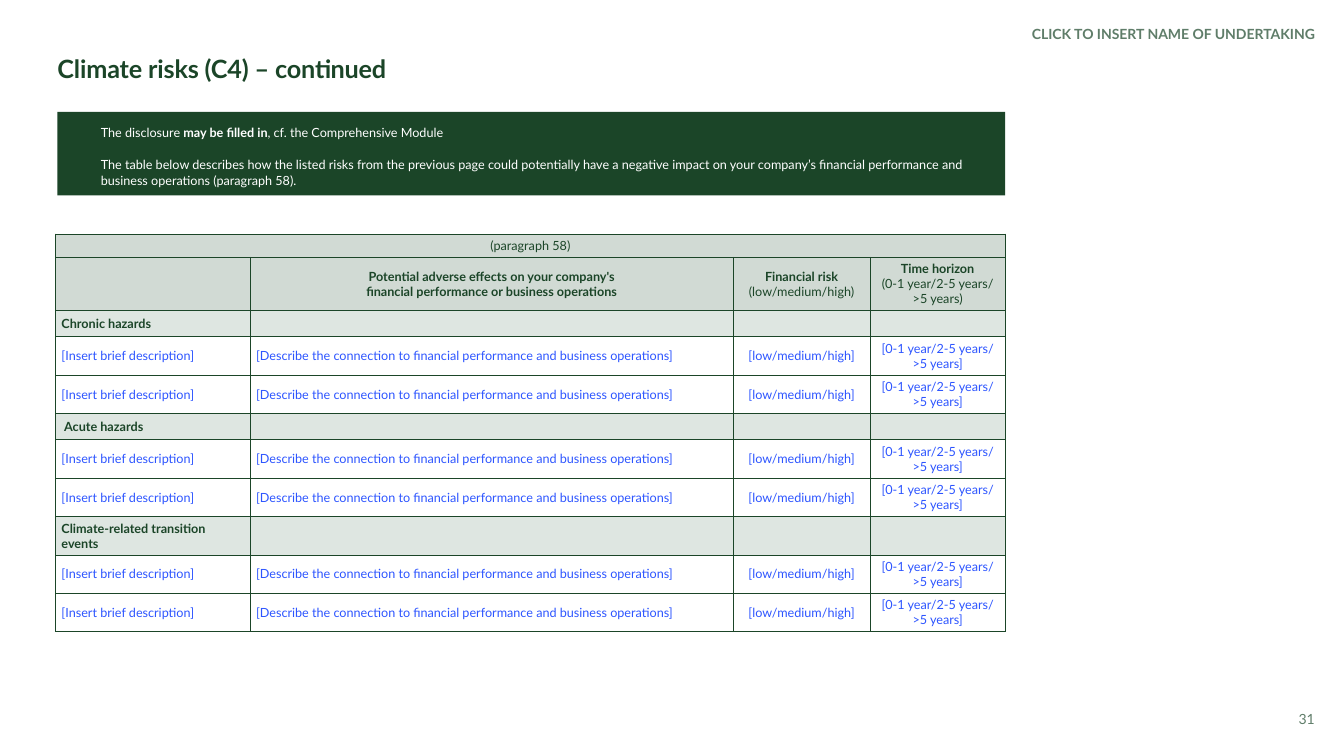
import pptx
import pptx.dml.color
import pptx.enum.shapes
import pptx.enum.text
import pptx.oxml.ns
import pptx.util
from lxml import etree
from pptx.util import Inches

COLORS = {
    "dark": "1B4528",
    "muted": "5F7D69",
    "header": "D1DAD4",
    "section": "DEE6E1",
    "input": "2D55FF",
    "white": "FFFFFF",
}
FONT = "Lato"
ALIGN = pptx.enum.text.PP_ALIGN
ANCHOR = pptx.enum.text.MSO_ANCHOR

COLUMN_WIDTHS = [1.93, 4.79, 1.36, 1.34]
COLUMN_ALIGNMENTS = [ALIGN.LEFT, ALIGN.LEFT, ALIGN.CENTER, ALIGN.CENTER]
CAPTION_HEIGHT, HEADER_HEIGHT, ENTRY_HEIGHT = 0.23, 0.53, 0.38
ENTRIES_PER_SECTION = 2
SECTIONS = [
    ("Chronic hazards", 0.26),
    (" Acute hazards", 0.26),
    ("Climate-related transition events", 0.38),
]
# Each header cell is a list of paragraphs, each paragraph a list of (text, bold) runs.
HEADERS = [
    [],
    [[("Potential adverse effects on your company's", True)],
     [("financial performance or business operations", True)]],
    [[("Financial risk ", True), ("(low/medium/high)", False)]],
    [[("Time horizon", True)], [("(0-1 year/2-5 years/ >5 years)", False)]],
]
ENTRY = [
    "[Insert brief description]",
    "[Describe the connection to financial performance and business operations]",
    "[low/medium/high]",
    "[0-1 year/2-5 years/ >5 years]",
]
NOTICE = [
    [("The disclosure ", False), ("may be filled in", True),
     (", cf. the Comprehensive Module", False)],
    [("The table below describes how the listed risks from the previous page could "
      "potentially have a negative impact on your company’s financial performance and "
      "business operations (paragraph 58).", False)],
]


def rgb(name):
    return pptx.dml.color.RGBColor.from_string(COLORS[name])


def set_margins(text_frame, left=0, top=0, right=0, bottom=0):
    text_frame.margin_left, text_frame.margin_top = Inches(left), Inches(top)
    text_frame.margin_right, text_frame.margin_bottom = Inches(right), Inches(bottom)


def format_run(run, size, color, bold):
    run.font.name = FONT
    run.font.size = pptx.util.Pt(size)
    run.font.bold = bold
    run.font.color.rgb = rgb(color)


def write_paragraphs(text_frame, paragraphs, size, color, alignment=ALIGN.LEFT):
    """Fill a text frame from lists of (text, bold) runs."""
    for index, runs in enumerate(paragraphs):
        paragraph = text_frame.paragraphs[0] if index == 0 else text_frame.add_paragraph()
        paragraph.alignment = alignment
        for text, bold in runs:
            run = paragraph.add_run()
            run.text = text
            format_run(run, size, color, bold)


def add_label(slide, box, text, bold):
    """Add a right-aligned line of muted text."""
    label = slide.shapes.add_textbox(*map(Inches, box))
    label.text_frame.word_wrap = True
    set_margins(label.text_frame)
    write_paragraphs(label.text_frame, [[(text, bold)]], 10, "muted", ALIGN.RIGHT)


def set_title(slide, text):
    title = slide.shapes.title
    title.left, title.top = Inches(0.57), Inches(0.56)
    title.width, title.height = Inches(12.21), Inches(0.28)
    frame = title.text_frame
    frame.text = text
    frame.auto_size = pptx.enum.text.MSO_AUTO_SIZE.NONE
    frame.vertical_anchor = ANCHOR.TOP
    set_margins(frame)
    paragraph = frame.paragraphs[0]
    paragraph.alignment = ALIGN.LEFT
    paragraph.line_spacing = 0.9
    format_run(paragraph.runs[0], 18, "dark", True)
    paragraph.runs[0].font._element.set("spc", "-10")


def add_notice(slide):
    notice = slide.shapes.add_shape(
        pptx.enum.shapes.MSO_SHAPE.RECTANGLE,
        Inches(0.57), Inches(1.11), Inches(9.4), Inches(0.83))
    notice.shadow.inherit = False
    notice.fill.solid()
    notice.fill.fore_color.rgb = rgb("dark")
    notice.line.fill.background()
    frame = notice.text_frame
    frame.word_wrap = True
    frame.vertical_anchor = ANCHOR.TOP
    set_margins(frame, 0.43, 0.12, 0.12, 0.16)
    write_paragraphs(frame, NOTICE, 9, "white")
    for paragraph in frame.paragraphs:
        paragraph.line_spacing = 1.06
    frame.paragraphs[1].space_before = pptx.util.Pt(11.5)


def add_borders(cell):
    properties = cell._tc.get_or_add_tcPr()
    for side in ("lnL", "lnR", "lnT", "lnB"):
        line = etree.SubElement(properties, pptx.oxml.ns.qn(f"a:{side}"),
                                w=str(pptx.util.Pt(0.5)))
        fill = etree.SubElement(line, pptx.oxml.ns.qn("a:solidFill"))
        etree.SubElement(fill, pptx.oxml.ns.qn("a:srgbClr"), val=COLORS["dark"])


def fill_cell(cell, paragraphs, fill, color, alignment):
    add_borders(cell)
    cell.fill.solid()
    cell.fill.fore_color.rgb = rgb(fill)
    cell.vertical_anchor = ANCHOR.MIDDLE
    cell.margin_left = cell.margin_right = Inches(0.06)
    cell.margin_top = cell.margin_bottom = Inches(0.04)
    write_paragraphs(cell.text_frame, paragraphs, 9, color, alignment)
    if not paragraphs:
        # Keeps an empty cell from stretching its row.
        etree.SubElement(cell.text_frame.paragraphs[0]._p,
                         pptx.oxml.ns.qn("a:endParaRPr"), sz="900")


def table_rows():
    """Return (height, cells, fill, text color, alignments) for every row."""
    centered = [ALIGN.CENTER] * len(COLUMN_WIDTHS)
    rows = [
        (CAPTION_HEIGHT, [[[("(paragraph 58)", False)]], [], [], []],
         "header", "dark", centered),
        (HEADER_HEIGHT, HEADERS, "header", "dark", centered),
    ]
    entry = [[[(text, False)]] for text in ENTRY]
    for name, height in SECTIONS:
        rows.append((height, [[[(name, True)]], [], [], []],
                     "section", "dark", COLUMN_ALIGNMENTS))
        rows += [(ENTRY_HEIGHT, entry, "white", "input",
                  COLUMN_ALIGNMENTS)] * ENTRIES_PER_SECTION
    return rows


def add_risk_table(slide):
    rows = table_rows()
    height = sum(row[0] for row in rows)
    table = slide.shapes.add_table(
        len(rows), len(COLUMN_WIDTHS), Inches(0.55), Inches(2.32),
        Inches(sum(COLUMN_WIDTHS)), Inches(height)).table
    table.first_row = table.horz_banding = False
    for column, width in zip(table.columns, COLUMN_WIDTHS):
        column.width = Inches(width)
    for table_row, (height, cells, fill, color, alignments) in zip(table.rows, rows):
        table_row.height = Inches(height)
        for cell, paragraphs, alignment in zip(table_row.cells, cells, alignments):
            fill_cell(cell, paragraphs, fill, color, alignment)
    table.cell(0, 0).merge(table.cell(0, len(COLUMN_WIDTHS) - 1))


def main():
    presentation = pptx.Presentation()
    presentation.slide_width, presentation.slide_height = Inches(13.33), Inches(7.5)
    slide = presentation.slides.add_slide(presentation.slide_layouts[5])
    add_label(slide, (9.06, 0.25, 3.98, 0.17), "CLICK TO INSERT NAME OF UNDERTAKING", True)
    set_title(slide, "Climate risks (C4) – continued")
    add_notice(slide)
    add_label(slide, (10.04, 7.05, 3, 0.17), "31", False)
    add_risk_table(slide)
    presentation.save("out.pptx")


if __name__ == "__main__":
    main()
